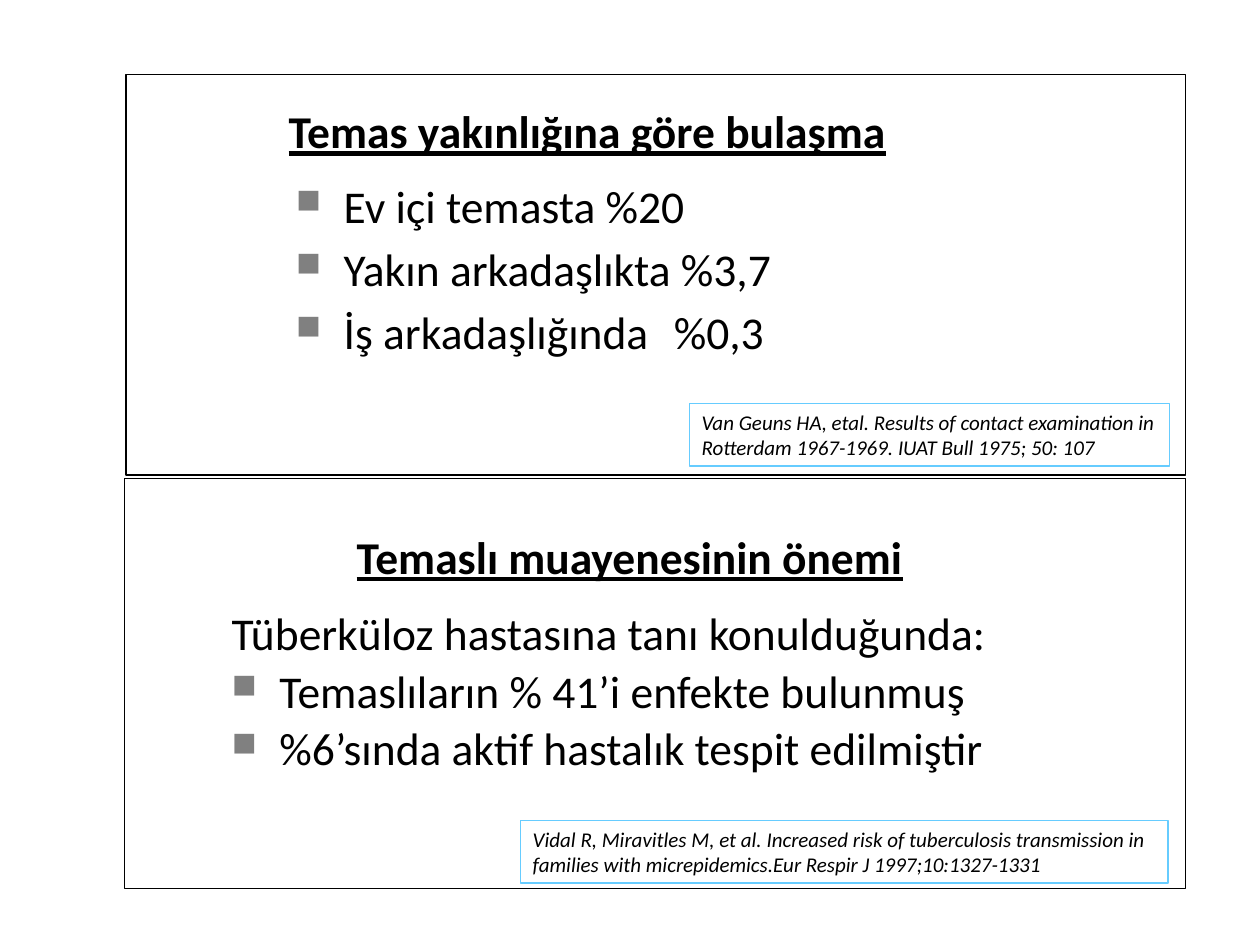
from dataclasses import dataclass

from lxml.etree import SubElement
from pptx import Presentation
from pptx.dml.color import RGBColor
from pptx.enum.shapes import MSO_SHAPE
from pptx.enum.text import MSO_ANCHOR as Anchor, MSO_AUTO_SIZE as AutoSize, PP_ALIGN as Align
from pptx.oxml.ns import qn
from pptx.util import Inches, Pt


@dataclass(frozen=True)
class Theme:
    font: str = "Calibri"
    ink: str = "000000"
    paper: str = "FFFFFF"
    bullet: str = "808080"
    citation_line: str = "66CCFF"
    body_size: int = 26
    citation_size: int = 12
    line_width: float = 0.75


THEME = Theme()


def color(hex_value):
    return RGBColor.from_string(hex_value)


def place(shape, box):
    shape.left, shape.top, shape.width, shape.height = (Inches(n) for n in box)


def add_frame(slide, box, line):
    frame = slide.shapes.add_shape(MSO_SHAPE.RECTANGLE, *(Inches(n) for n in box))
    frame.shadow.inherit = False
    frame.fill.solid()
    frame.fill.fore_color.rgb = color(THEME.paper)
    frame.line.color.rgb = color(line)
    frame.line.width = Pt(THEME.line_width)
    return frame


def prepare_text(shape, anchor=Anchor.TOP):
    text = shape.text_frame
    text.word_wrap = True
    text.auto_size = AutoSize.NONE
    text.vertical_anchor = anchor
    text.margin_left = text.margin_right = Inches(0.1)
    text.margin_top = text.margin_bottom = Inches(0.05)
    return text


def add_run(paragraph, words, size, **style):
    run = paragraph.add_run()
    run.text = words
    run.font.name = THEME.font
    run.font.size = Pt(size)
    run.font.color.rgb = color(THEME.ink)
    for key, value in style.items():
        setattr(run.font, key, value)


def write_heading(shape, words, align, anchor):
    paragraph = prepare_text(shape, anchor).paragraphs[0]
    paragraph.alignment = align
    add_run(paragraph, words, THEME.body_size, bold=True, underline=True)


def add_bullet(properties):
    tint = SubElement(properties, qn("a:buClr"))
    SubElement(tint, qn("a:srgbClr"), val=THEME.bullet)
    SubElement(properties, qn("a:buSzPct"), val="75000")
    SubElement(properties, qn("a:buChar"), char="■")


def add_findings(slide, box, findings, intro=None, line_spacing=1.0):
    """Bulleted findings, after an optional unbulleted lead-in."""
    body = slide.shapes.add_textbox(*(Inches(n) for n in box))
    text = prepare_text(body)
    lines = ([intro] if intro else []) + findings
    for index, words in enumerate(lines):
        paragraph = text.add_paragraph() if index else text.paragraphs[0]
        paragraph.line_spacing = line_spacing
        paragraph.space_before = Pt(5)
        properties = paragraph._p.get_or_add_pPr()
        properties.set("marL", str(Inches(0.38)))
        properties.set("indent", str(Inches(-0.38)))
        if words != intro:
            add_bullet(properties)
        add_run(paragraph, words, THEME.body_size)


def add_citation(slide, box, words):
    citation = add_frame(slide, box, THEME.citation_line)
    paragraph = prepare_text(citation).paragraphs[0]
    paragraph.alignment = Align.LEFT
    add_run(paragraph, words, THEME.citation_size, italic=True)


def add_contagion_panel(slide, box):
    left, top, width, height = box
    panel = add_frame(slide, box, THEME.ink)
    title = slide.shapes.title
    panel._element.addnext(title._element)
    place(title, (left + 1.19, top + 0.18, 6.19, 0.54))
    write_heading(title, "Temas yakınlığına göre bulaşma", Align.LEFT, Anchor.TOP)
    add_findings(slide, (left + 1.25, top + 0.77, 5.67, 1.69),
                 ["Ev içi temasta %20", "Yakın arkadaşlıkta %3,7", "İş arkadaşlığında\t%0,3"])
    add_citation(slide, (left + width - 3.94, top + height - 0.57, 3.81, 0.5),
                 "Van Geuns HA, etal. Results of contact examination in "
                 "Rotterdam 1967-1969. IUAT Bull 1975; 50: 107")


def add_examination_panel(slide, box):
    left, top, width, height = box
    add_frame(slide, box, THEME.ink)
    heading_box = (left + 0.76, top + 0.28, 6.5, 0.67)
    heading = slide.shapes.add_textbox(*(Inches(n) for n in heading_box))
    write_heading(heading, "Temaslı muayenesinin önemi", Align.CENTER, Anchor.MIDDLE)
    add_findings(slide, (left + 0.75, top + 1, 6.96, 1.47),
                 ["Temaslıların % 41’i enfekte bulunmuş",
                  "%6’sında aktif hastalık tespit edilmiştir"],
                 intro="Tüberküloz hastasına tanı konulduğunda:", line_spacing=0.9)
    add_citation(slide, (left + width - 5.28, top + height - 0.54, 5.14, 0.5),
                 "Vidal R, Miravitles M, et al. Increased risk of tuberculosis transmission in "
                 "families with micrepidemics.Eur Respir J 1997;10:1327-1331")


def main():
    deck = Presentation()
    deck.slide_width, deck.slide_height = Inches(10), Inches(7.5)
    slide = deck.slides.add_slide(deck.slide_layouts.get_by_name("Title Only"))
    add_contagion_panel(slide, (1, 0.59, 8.41, 3.18))
    add_examination_panel(slide, (0.99, 3.8, 8.42, 3.25))
    deck.save("out.pptx")


if __name__ == "__main__":
    main()
